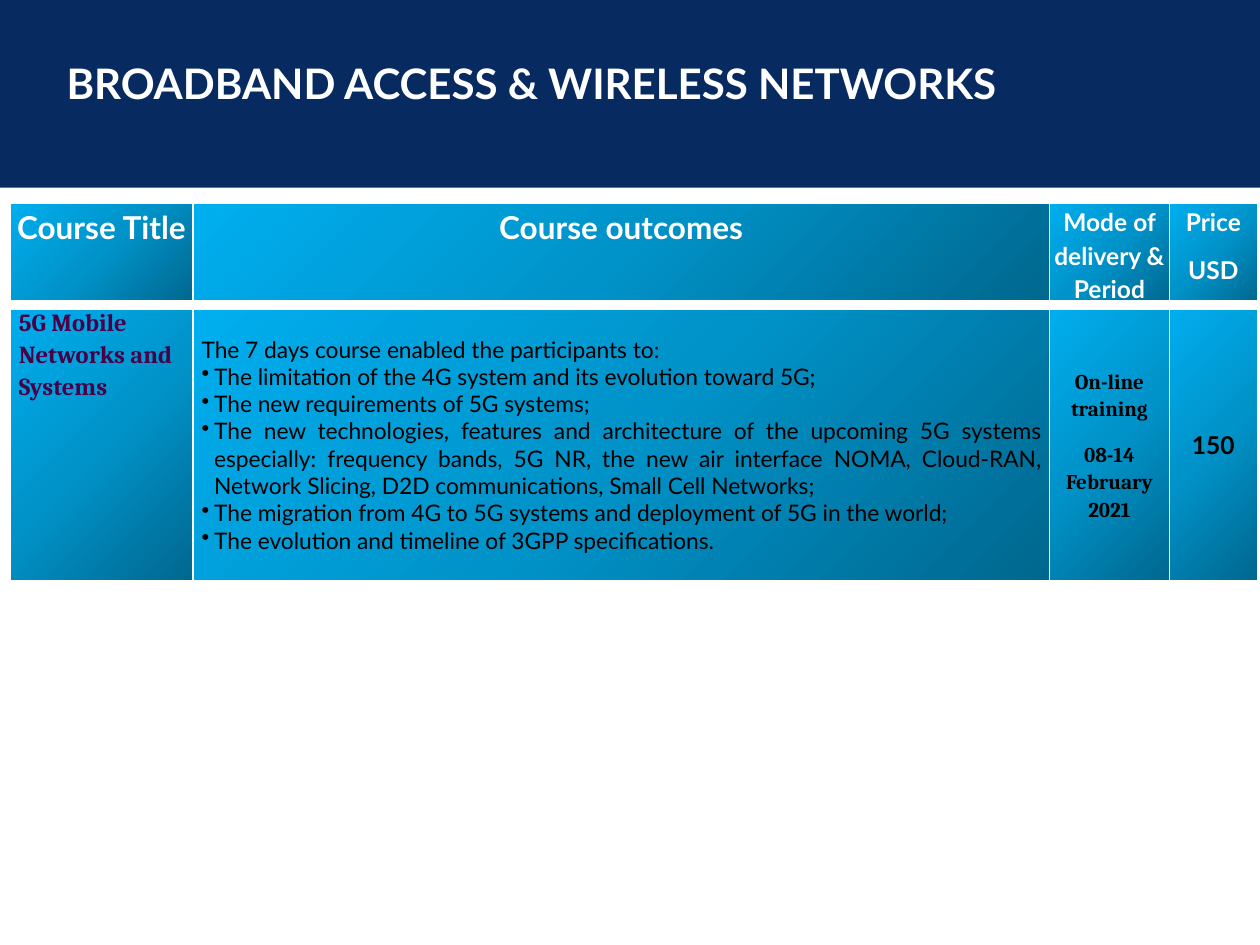
from lxml import etree
from pptx import Presentation
from pptx.dml.color import RGBColor
from pptx.enum.shapes import MSO_SHAPE
from pptx.enum.text import MSO_ANCHOR, PP_ALIGN
from pptx.oxml.ns import qn
from pptx.util import Inches, Pt

RECTANGLE = MSO_SHAPE.RECTANGLE
TOP, MIDDLE = MSO_ANCHOR.TOP, MSO_ANCHOR.MIDDLE
LEFT, CENTER, JUSTIFY = PP_ALIGN.LEFT, PP_ALIGN.CENTER, PP_ALIGN.JUSTIFY

COLORS = {"navy": "072B60", "white": "FFFFFF", "black": "000000", "plum": "480048",
          "deep": "00678E", "mid": "0093C9", "bright": "00AEEF"}
GRADIENT = [(0, "deep"), (50, "mid"), (100, "bright")]

COLUMN_WIDTHS = [1.45, 6.8, 0.95, 0.7]
ROW_HEIGHTS = [0.81, 2.22]
HEADERS = [(["Course Title"], 18), (["Course outcomes"], 18),
           (["Mode of delivery & Period"], 14), (["Price", "USD"], 14)]
OUTCOMES_INTRO = "The 7 days course enabled the participants to:"
OUTCOMES = [
    "The limitation of the 4G system and its evolution toward 5G;",
    "The new requirements of 5G systems;",
    "The new technologies, features and architecture of the upcoming 5G systems especially: "
    "frequency bands, 5G NR, the new air interface NOMA, Cloud-RAN, Network Slicing, "
    "D2D communications, Small Cell Networks; ",
    "The migration from 4G to 5G systems and deployment of 5G in the world;",
    "The evolution and timeline of 3GPP specifications.",
]


def rgb(name):
    return RGBColor.from_string(COLORS[name])


def add_xml(parent, tag, **attributes):
    return etree.SubElement(parent, qn(tag), {key: str(value) for key, value in attributes.items()})


def set_font(paragraph, size, color, bold=True, family="Lato"):
    font = paragraph.font
    font.name, font.size, font.bold = family, Pt(size), bold
    font.color.rgb = rgb(color)


def add_bullet(paragraph):
    properties = paragraph._p.get_or_add_pPr()
    properties.set("marL", str(Inches(0.1)))
    properties.set("indent", str(-Inches(0.1)))
    bullet = etree.Element(qn("a:buChar"), {"char": "•"})
    default_run = properties.find(qn("a:defRPr"))
    if default_run is None:
        properties.append(bullet)
    else:
        default_run.addprevious(bullet)


def style_cell(cell, top_border, inset, anchor):
    """Set white borders, the radial fill, the side margins and the anchor."""
    cell.margin_left = cell.margin_right = Inches(inset)
    cell.margin_top = cell.margin_bottom = 0
    cell.vertical_anchor = anchor
    properties = cell._tc.get_or_add_tcPr()
    for side, width in (("L", 1), ("R", 1), ("T", top_border), ("B", 6)):
        line = add_xml(properties, f"a:ln{side}", w=Pt(width))
        add_xml(add_xml(line, "a:solidFill"), "a:srgbClr", val=COLORS["white"])
    gradient = add_xml(properties, "a:gradFill", rotWithShape=1)
    stops = add_xml(gradient, "a:gsLst")
    for position, color in GRADIENT:
        add_xml(add_xml(stops, "a:gs", pos=position * 1000), "a:srgbClr", val=COLORS[color])
    radial = add_xml(gradient, "a:path", path="circle")
    add_xml(radial, "a:fillToRect", l=100000, t=100000)


def write_cell(cell, lines, size, color="black", align=CENTER, bold=True, family="Lato",
               spacing=None, before=0, after=0):
    frame = cell.text_frame
    frame.text = "\n".join(lines)
    for paragraph in frame.paragraphs:
        paragraph.alignment = align
        paragraph.line_spacing = spacing
        paragraph.space_before, paragraph.space_after = Pt(before), Pt(after)
        set_font(paragraph, size, color, bold, family)


def add_banner(slide, left, top, width, height):
    band = slide.shapes.add_shape(RECTANGLE, left, top, width, height)
    band.shadow.inherit = False
    band.fill.solid()
    band.fill.fore_color.rgb = rgb("navy")
    band.line.fill.background()
    title = slide.shapes.add_textbox(left + Inches(0.43), top + Inches(0.41),
                                     Inches(7.64), Inches(0.5))
    title.text_frame.word_wrap = False
    heading = title.text_frame.paragraphs[0]
    heading.text = "BROADBAND ACCESS & WIRELESS NETWORKS"
    set_font(heading, 24, "white")


def add_course_table(slide, left, top, width, height):
    table = slide.shapes.add_table(len(ROW_HEIGHTS), len(COLUMN_WIDTHS),
                                   left, top, width, height).table
    for column, column_width in zip(table.columns, COLUMN_WIDTHS):
        column.width = Inches(column_width)
    for row, row_height in zip(table.rows, ROW_HEIGHTS):
        row.height = Inches(row_height)

    for index, (lines, size) in enumerate(HEADERS):
        header = table.cell(0, index)
        style_cell(header, 1, 0.02, TOP)
        write_cell(header, lines, size, "white", spacing=1.15, before=4, after=4)

    course, outcomes, delivery, price = table.rows[1].cells
    for cell in (course, outcomes, delivery, price):
        style_cell(cell, 6, 0.07, TOP if cell is course else MIDDLE)
    write_cell(course, ["5G Mobile Networks and Systems"], 14, "plum", LEFT,
               family="Cambria", spacing=1.15, after=10)
    write_cell(outcomes, [OUTCOMES_INTRO, *OUTCOMES], 13, align=JUSTIFY, bold=False)
    for paragraph in outcomes.text_frame.paragraphs[1:]:
        add_bullet(paragraph)
    write_cell(delivery, ["On-line training", "08-14 February 2021"], 12,
               family="Cambria", spacing=1.15, after=10)
    write_cell(price, ["150"], 14)


def main():
    deck = Presentation()
    deck.slide_width, deck.slide_height = Inches(10), Inches(7.5)
    slide = deck.slides.add_slide(deck.slide_layouts[6])
    add_banner(slide, 0, 0, deck.slide_width, Inches(1.49))
    add_course_table(slide, Inches(0.08), Inches(1.61),
                     Inches(sum(COLUMN_WIDTHS)), Inches(sum(ROW_HEIGHTS)))
    deck.save("out.pptx")


if __name__ == "__main__":
    main()
